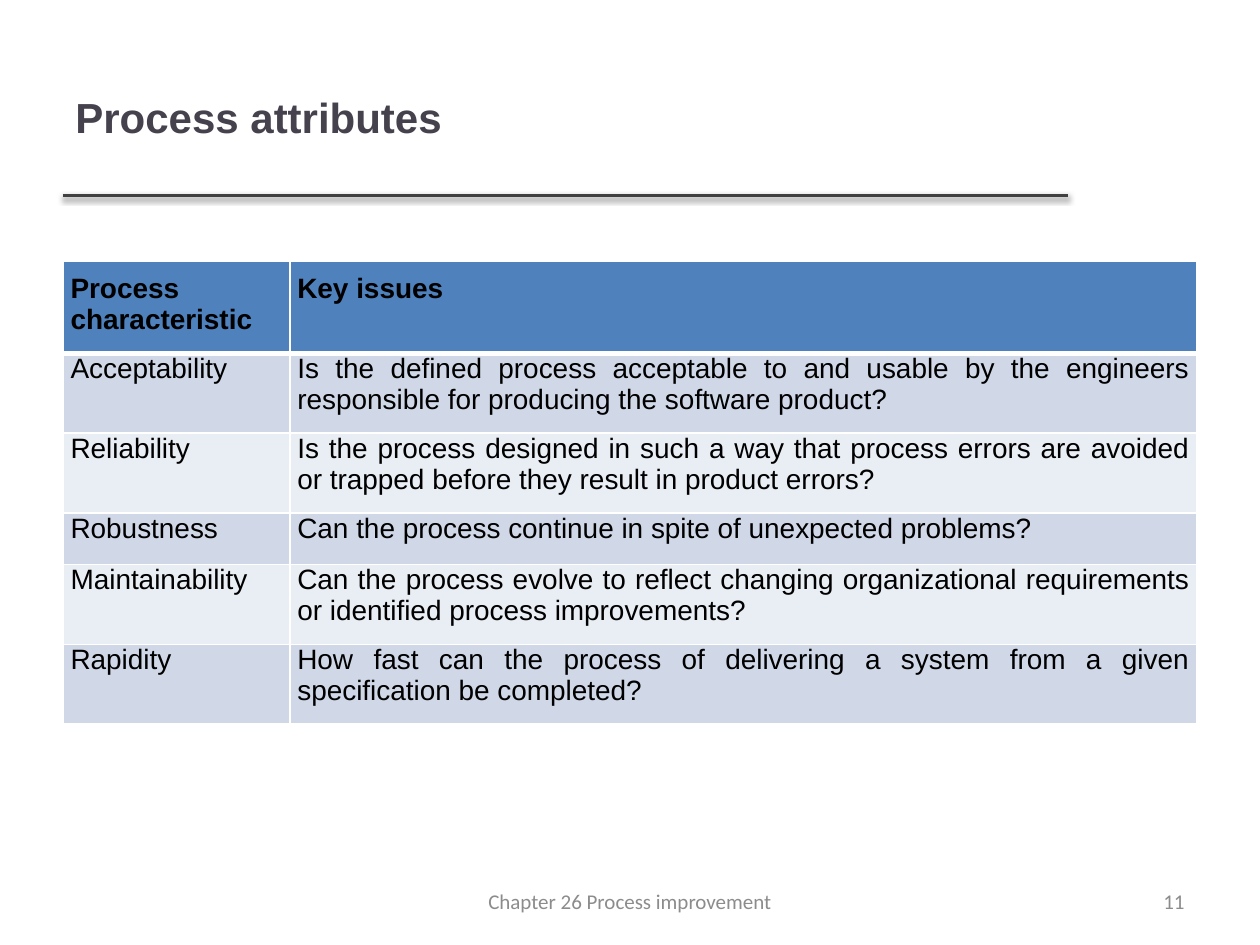
from lxml import etree
from pptx import Presentation
from pptx.dml.color import RGBColor
from pptx.enum.shapes import MSO_CONNECTOR
from pptx.enum.text import MSO_ANCHOR, PP_ALIGN
from pptx.oxml import parse_xml
from pptx.oxml.ns import nsdecls, qn
from pptx.util import Inches, Pt

LEFT, CENTER, RIGHT = PP_ALIGN.LEFT, PP_ALIGN.CENTER, PP_ALIGN.RIGHT
JUSTIFY = PP_ALIGN.JUSTIFY
MIDDLE = MSO_ANCHOR.MIDDLE
STRAIGHT = MSO_CONNECTOR.STRAIGHT

WHITE = RGBColor(0xFF, 0xFF, 0xFF)
BLACK = RGBColor(0x00, 0x00, 0x00)
RULE_GRAY = RGBColor(0x40, 0x40, 0x40)
TITLE_GRAY = RGBColor(0x46, 0x42, 0x4D)
FOOTER_GRAY = RGBColor(0x8C, 0x8C, 0x8C)
HEADER_BLUE = RGBColor(0x4F, 0x81, 0xBD)
BANDS = (RGBColor(0xD0, 0xD8, 0xE8), RGBColor(0xE9, 0xED, 0xF4))

SLIDE_WIDTH, SLIDE_HEIGHT = Inches(10), Inches(7.5)
MARGIN = Inches(0.5)
CONTENT_WIDTH = SLIDE_WIDTH - 2 * MARGIN
TITLE_BOX = (MARGIN, Inches(0.3), Inches(7.98), Inches(1.25))
TABLE_BOX = (MARGIN, Inches(2.07), CONTENT_WIDTH, Inches(2.46))
FOOTER_BOX = (MARGIN, Inches(6.95), CONTENT_WIDTH, Inches(0.4))
FIRST_COLUMN_SHARE = 0.2

ATTRIBUTES = [
    ("Process characteristic", "Key issues"),
    ("Acceptability", "Is the defined process acceptable to and usable by the "
     "engineers responsible for producing the software product?"),
    ("Reliability", "Is the process designed in such a way that process errors "
     "are avoided or trapped before they result in product errors?"),
    ("Robustness", "Can the process continue in spite of unexpected problems?"),
    ("Maintainability", "Can the process evolve to reflect changing "
     "organizational requirements or identified process improvements?"),
    ("Rapidity", "How fast can the process of delivering a system from a given "
     "specification be completed?"),
]


def style_paragraph(paragraph, alignment, font_name, size, color, bold=False):
    paragraph.alignment = alignment
    font = paragraph.font
    font.name, font.size, font.bold = font_name, Pt(size), bold
    font.color.rgb = color


def add_text(slide, box, text, *style):
    frame = slide.shapes.add_textbox(*box).text_frame
    frame.word_wrap = True
    frame.vertical_anchor = MIDDLE
    frame.text = text
    style_paragraph(frame.paragraphs[0], *style)


def add_shadow(connector):
    connector._element.spPr.append(parse_xml(
        f'<a:effectLst {nsdecls("a")}>'
        f'<a:outerShdw blurRad="{Pt(3.1)}" dist="{Pt(1.6)}" dir="5400000" rotWithShape="0">'
        '<a:srgbClr val="000000"><a:alpha val="38000"/></a:srgbClr>'
        '</a:outerShdw></a:effectLst>'))


def add_title(slide, box):
    """Place the title with the shadowed rule along the bottom of its box."""
    left, top, width, height = box
    bottom = top + height
    rule = slide.shapes.add_connector(STRAIGHT, left, bottom, left + width, bottom)
    rule.line.color.rgb = RULE_GRAY
    rule.line.width = Pt(2)
    add_shadow(rule)
    add_text(slide, box, "Process attributes", LEFT, "Arial", 24, TITLE_GRAY, True)


def set_borders(cell, bottom_width):
    properties = cell._tc.get_or_add_tcPr()
    widths = {"lnL": 1, "lnR": 1, "lnT": 1, "lnB": bottom_width}
    for index, (side, width) in enumerate(widths.items()):
        border = etree.Element(qn(f"a:{side}"), w=str(Pt(width)))
        fill = etree.SubElement(border, qn("a:solidFill"))
        etree.SubElement(fill, qn("a:srgbClr"), val=str(WHITE))
        properties.insert(index, border)


def fill_cell(cell, text, is_header, color):
    cell.margin_left = cell.margin_right = Inches(0.06)
    cell.margin_top = Inches(0.1 if is_header else 0)
    cell.margin_bottom = Inches(0.1)
    cell.fill.solid()
    cell.fill.fore_color.rgb = color
    set_borders(cell, 3 if is_header else 1)
    cell.text = text
    style_paragraph(cell.text_frame.paragraphs[0], JUSTIFY, "Arial", 16, BLACK, is_header)


def add_attribute_table(slide, box):
    width = box[2]
    table = slide.shapes.add_table(len(ATTRIBUTES), len(ATTRIBUTES[0]), *box).table
    table.columns[0].width = int(width * FIRST_COLUMN_SHARE)
    table.columns[1].width = width - table.columns[0].width
    for row, texts in enumerate(ATTRIBUTES):
        is_header = row == 0
        color = HEADER_BLUE if is_header else BANDS[(row - 1) % len(BANDS)]
        for column, text in enumerate(texts):
            fill_cell(table.cell(row, column), text, is_header, color)


def add_footer(slide, box):
    for text, alignment in (("11", RIGHT), ("Chapter 26 Process improvement", CENTER)):
        left, top, width, height = box
        part_width = Inches(2.33 if alignment == RIGHT else 3.17)
        spare = width - part_width
        offset = spare if alignment == RIGHT else spare // 2
        add_text(slide, (left + offset, top, part_width, height), text,
                 alignment, "Calibri", 12, FOOTER_GRAY)


def main():
    presentation = Presentation()
    presentation.slide_width, presentation.slide_height = SLIDE_WIDTH, SLIDE_HEIGHT
    slide = presentation.slides.add_slide(presentation.slide_layouts[6])
    add_title(slide, TITLE_BOX)
    add_attribute_table(slide, TABLE_BOX)
    add_footer(slide, FOOTER_BOX)
    presentation.save("out.pptx")


if __name__ == "__main__":
    main()
